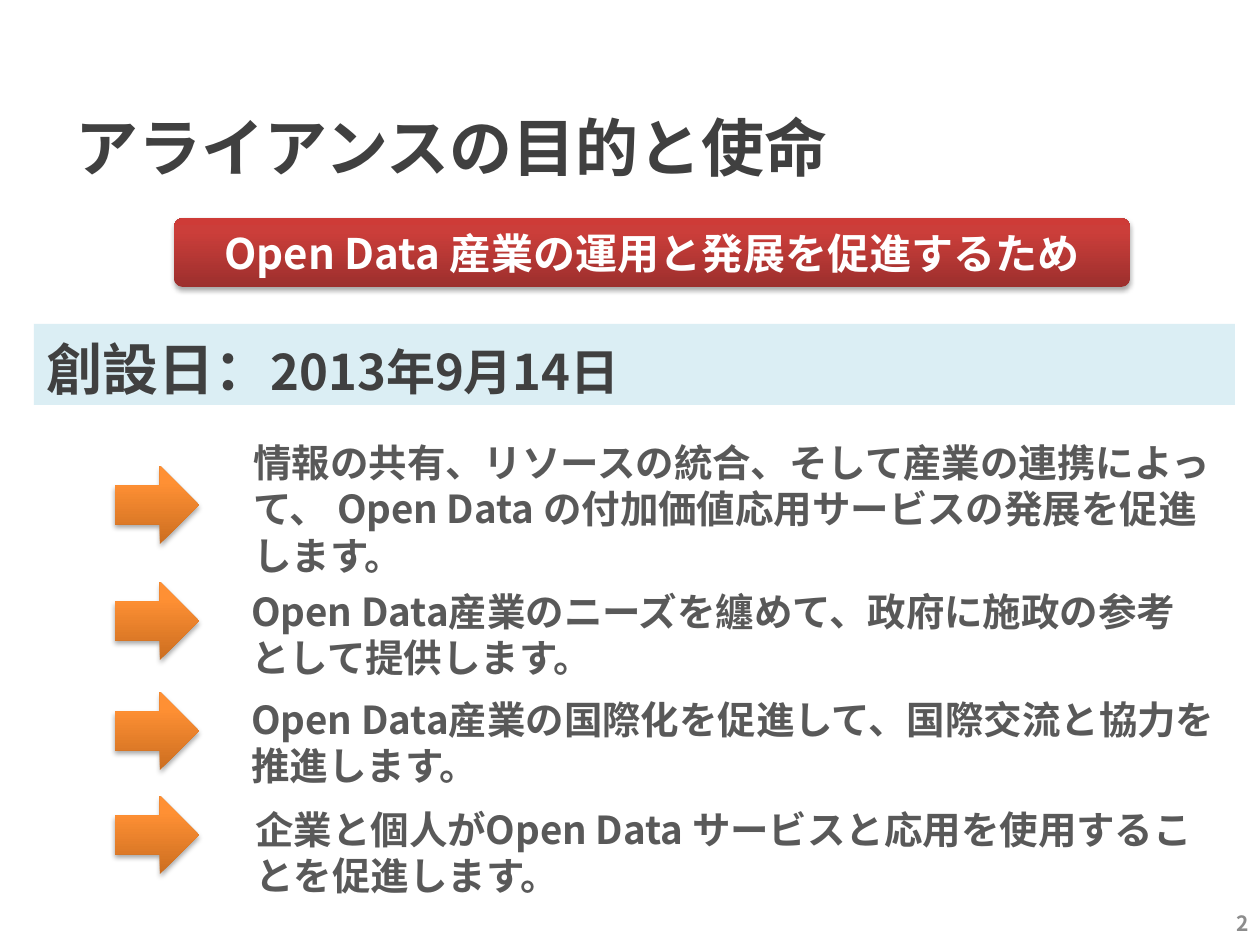
from lxml import etree
from pptx import Presentation
from pptx.dml.color import RGBColor
from pptx.enum.shapes import MSO_SHAPE as SHAPE
from pptx.enum.text import MSO_ANCHOR as ANCHOR, PP_ALIGN as ALIGN
from pptx.oxml.ns import qn
from pptx.util import Inches, Pt

EMU_PER_PX = Inches(1) / 126
FONT = "Noto Sans CJK SC"
DARK, GREY, PALE = "404040", "595959", "8C8C8C"
RED = [(0, "9C2F2D"), (80, "CB3E3A"), (100, "CE3B37")]
ORANGE = [(0, "CC6E20"), (80, "FF9034"), (100, "FF9136")]

MISSIONS = [
    (466, (241, 433, 985, 152),
     "情報の共有、リソースの統合、そして産業の連携によって、 Open Data の付加価値応用サービスの発展を促進します。"),
    (582, (239, 582, 985, 106),
     "Open Data産業のニーズを纏めて、政府に施政の参考として提供します。"),
    (692, (239, 690, 995, 106),
     "Open Data産業の国際化を促進して、国際交流と協力を推進します。"),
    (796, (243, 800, 992, 106),
     "企業と個人がOpen Data サービスと応用を使用することを促進します。"),
]


def px(n):
    return round(n * EMU_PER_PX)


def box(*lengths):
    return [px(n) for n in lengths]


def rgb(color):
    return RGBColor.from_string(color)


def sub(parent, tag, **attrs):
    return etree.SubElement(parent, qn(tag), {k: str(v) for k, v in attrs.items()})


def style_run(r, size, color):
    r.font.size = Pt(size)
    r.font.bold = True
    r.font.color.rgb = rgb(color)
    r.font.name = FONT
    sub(r.font._element, "a:ea", typeface=FONT)


def write(sp, text, size, color, align=ALIGN.LEFT, anchor=ANCHOR.MIDDLE, spacing=None):
    tf = sp.text_frame
    tf.word_wrap = True
    tf.vertical_anchor = anchor
    tf.text = text
    p = tf.paragraphs[0]
    p.alignment = align
    if spacing:
        p.line_spacing = Pt(spacing)
    style_run(p.runs[0], size, color)
    return p


def add_text(slide, pos, *args, **kwargs):
    return write(slide.shapes.add_textbox(*box(*pos)), *args, **kwargs)


def add_plain_shape(slide, kind, pos):
    sp = slide.shapes.add_shape(kind, *box(*pos))
    sp.line.fill.background()
    sp.shadow.inherit = False
    return sp


def add_glossy_shape(slide, kind, pos, stops):
    sp = add_plain_shape(slide, kind, pos)
    spPr = sp._element.spPr
    grad = etree.Element(qn("a:gradFill"), rotWithShape="1")
    gsLst = sub(grad, "a:gsLst")
    for percent, color in stops:
        sub(sub(gsLst, "a:gs", pos=percent * 1000), "a:srgbClr", val=color)
    sub(grad, "a:lin", ang=270 * 60000, scaled=0)
    spPr.find(qn("a:prstGeom")).addnext(grad)
    shadow = sub(spPr.find(qn("a:effectLst")), "a:outerShdw", blurRad=Pt(3.1),
                 dist=Pt(1.8), dir=90 * 60000, rotWithShape=0)
    sub(sub(shadow, "a:srgbClr", val="000000"), "a:alpha", val=35000)
    return sp


def add_title(slide, text):
    title = slide.shapes.title
    title.left, title.top, title.width, title.height = box(63, 67, 1134, 158)
    write(title, text, 36, DARK)


def add_founding_bar(slide):
    bar = add_plain_shape(slide, SHAPE.RECTANGLE, (34, 324, 1201, 81))
    bar.fill.solid()
    bar.fill.fore_color.rgb = rgb("DBEEF4")
    p = write(bar, "創設日：", 32, DARK, anchor=ANCHOR.TOP, spacing=41)
    r = p.add_run()
    r.text = "2013年9月14日"
    style_run(r, 28, DARK)


def main():
    prs = Presentation()
    prs.slide_width, prs.slide_height = Inches(10), Inches(7.5)
    slide = prs.slides.add_slide(prs.slide_layouts[5])

    add_title(slide, "アライアンスの目的と使命")
    add_text(slide, (968, 898, 293, 50), "2", 12, PALE, align=ALIGN.RIGHT)
    banner = add_glossy_shape(slide, SHAPE.ROUNDED_RECTANGLE, (174, 218, 956, 69), RED)
    banner.adjustments[0] = 0.13
    write(banner, "Open Data 産業の運用と発展を促進するため", 24, "FFFFFF", align=ALIGN.CENTER)
    for arrow_top, pos, text in MISSIONS:
        add_glossy_shape(slide, SHAPE.RIGHT_ARROW, (115, arrow_top, 84, 78), ORANGE)
        add_text(slide, pos, text, 22, GREY, anchor=ANCHOR.TOP, spacing=26.4)
    add_founding_bar(slide)

    prs.save("out.pptx")


if __name__ == "__main__":
    main()
